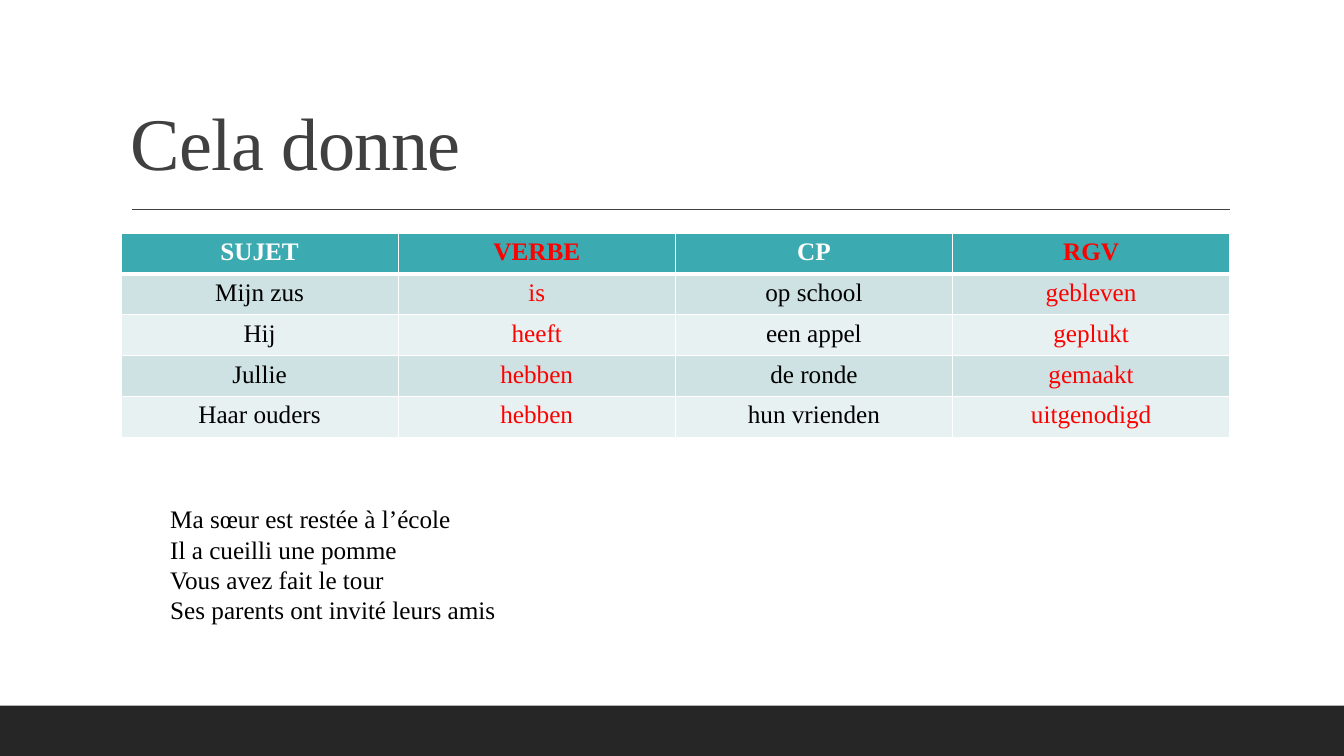
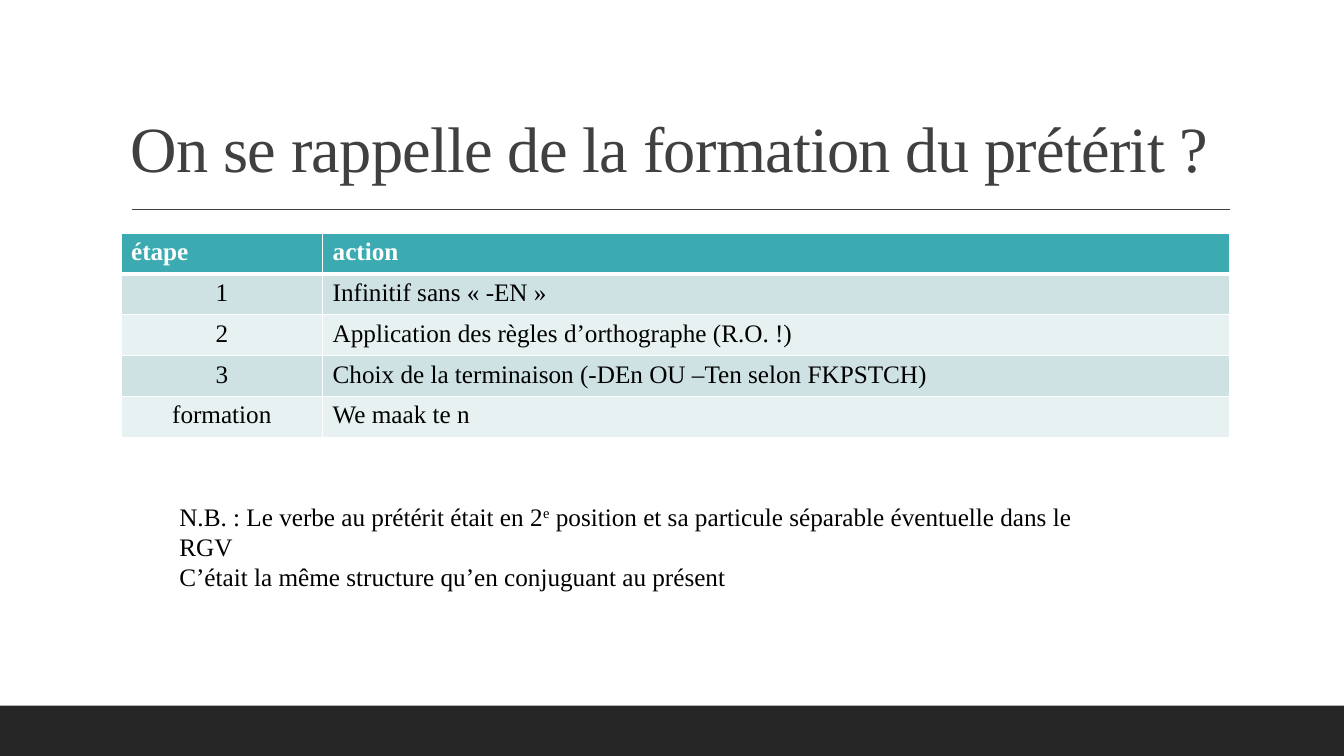
from lxml import etree
from pptx import Presentation
from pptx import util as u
from pptx.dml.color import RGBColor
from pptx.enum import shapes, text
from pptx.oxml import parse_xml
from pptx.oxml.ns import nsdecls

FONT = "Times New Roman"
COLORS = {
    "band": "262626",
    "title": "404040",
    "header": "3BABB1",
    "odd": "CEE2E4",
    "even": "E8F1F2",
    "white": "FFFFFF",
    "black": "000000",
    "red": "FF0000",
}
LEFT, RIGHT_MARGIN = 3.05, 2.88
SLIDE_W, SLIDE_H = 33.87, 19.05
CONTENT_W = 27.94
ROW_H = 1.03
BAND_H = 1.27

SLIDES = [
    {
        "title": "Cela donne",
        "title_size": 53,
        "columns": [CONTENT_W / 4] * 4,
        "red_columns": (1, 3),
        "centered": lambda row, column: True,
        "rows": [
            ["SUJET", "VERBE", "CP", "RGV"],
            ["Mijn zus", "is", "op school", "gebleven"],
            ["Hij", "heeft", "een appel", "geplukt"],
            ["Jullie", "hebben", "de ronde", "gemaakt"],
            ["Haar ouders", "hebben", "hun vrienden", "uitgenodigd"],
        ],
        "remarks_at": (4.04, 12.57, 26.11, 3.33),
        "remarks": [
            "Ma sœur est restée à l’école",
            "Il a cueilli une pomme",
            "Vous avez fait le tour",
            "Ses parents ont invité leurs amis",
        ],
    },
    {
        "title": "On se rappelle de la formation du prétérit ?",
        "title_size": 46,
        "columns": [5.08, CONTENT_W - 5.08],
        "red_columns": (),
        "centered": lambda row, column: row > 0 and column == 0,
        "rows": [
            ["étape", "action"],
            ["1", "Infinitif sans « -EN »"],
            ["2", "Application des règles d’orthographe (R.O. !)"],
            ["3", "Choix de la terminaison (-DEn OU –Ten selon FKPSTCH)"],
            ["formation", "We maak te n"],
        ],
        "remarks_at": (4.27, 12.5, 24, 1.8),
        "remarks": [
            "N.B. : Le verbe au prétérit était en 2^e^ position et sa particule "
            "séparable éventuelle dans le RGV",
            "C’était la même structure qu’en conjuguant au présent",
        ],
    },
]


def write(frame, lines, size=18, color="black", bold=False, centered=False,
          spacing=None, tracking=None):
    frame.word_wrap = True
    for index, line in enumerate(lines):
        paragraph = frame.paragraphs[0] if index == 0 else frame.add_paragraph()
        paragraph.alignment = text.PP_ALIGN.CENTER if centered else text.PP_ALIGN.LEFT
        if spacing:
            paragraph.line_spacing = spacing
        for part, words in enumerate(line.split("^")):
            run = paragraph.add_run()
            run.text = words
            run.font.name = FONT
            run.font.size = u.Pt(size)
            run.font.bold = bold
            run.font.color.rgb = RGBColor.from_string(COLORS[color])
            if tracking:
                run.font._element.set("spc", str(tracking))
            if part % 2:
                run.font._element.set("baseline", "30000")


def set_borders(cell, row):
    widths = {"L": 1, "R": 1, "T": 3 if row == 1 else 1, "B": 3 if row == 0 else 1}
    for side, width in widths.items():
        cell._tc.get_or_add_tcPr().append(parse_xml(
            f'<a:ln{side} {nsdecls("a")} w="{u.Pt(width)}"><a:solidFill>'
            f'<a:srgbClr val="{COLORS["white"]}"/></a:solidFill></a:ln{side}>'))


deck = Presentation()
deck.slide_width, deck.slide_height = u.Cm(SLIDE_W), u.Cm(SLIDE_H)

for content in SLIDES:
    slide = deck.slides.add_slide(deck.slide_layouts[6])

    band = slide.shapes.add_shape(
        shapes.MSO_SHAPE.RECTANGLE, 0, u.Cm(SLIDE_H - BAND_H), u.Cm(SLIDE_W), u.Cm(BAND_H))
    band.shadow.inherit = False
    band.fill.solid()
    band.fill.fore_color.rgb = RGBColor.from_string(COLORS["band"])
    band.line.fill.background()

    title_rule = slide.shapes.add_connector(
        shapes.MSO_CONNECTOR.STRAIGHT, u.Cm(3.33), u.Cm(5.28),
        u.Cm(SLIDE_W - RIGHT_MARGIN), u.Cm(5.28))
    title_rule.line.color.rgb = RGBColor.from_string(COLORS["title"])
    title_rule.line.width = u.Pt(1)
    etree.SubElement(
        title_rule._element.spPr,
        "{http://schemas.openxmlformats.org/drawingml/2006/main}effectLst")

    title = slide.shapes.add_textbox(u.Cm(LEFT), u.Cm(0.79), u.Cm(CONTENT_W), u.Cm(4.04))
    title.text_frame.vertical_anchor = text.MSO_ANCHOR.BOTTOM
    write(title.text_frame, [content["title"]], size=content["title_size"],
          color="title", spacing=0.9, tracking=-50)

    rows, columns = content["rows"], content["columns"]
    grammar = slide.shapes.add_table(
        len(rows), len(columns), u.Cm(LEFT), u.Cm(5.87),
        u.Cm(CONTENT_W), u.Cm(ROW_H * len(rows))).table
    for column, width in enumerate(columns):
        grammar.columns[column].width = u.Cm(width)
    for row, entries in enumerate(rows):
        grammar.rows[row].height = u.Cm(ROW_H)
        shade = "header" if row == 0 else "odd" if row % 2 else "even"
        for column, entry in enumerate(entries):
            cell = grammar.cell(row, column)
            set_borders(cell, row)
            cell.fill.solid()
            cell.fill.fore_color.rgb = RGBColor.from_string(COLORS[shade])
            plain = "white" if row == 0 else "black"
            write(cell.text_frame, [entry], bold=row == 0,
                  color="red" if column in content["red_columns"] else plain,
                  centered=content["centered"](row, column))

    remarks = slide.shapes.add_textbox(*(u.Cm(length) for length in content["remarks_at"]))
    write(remarks.text_frame, content["remarks"])

deck.save("out.pptx")
